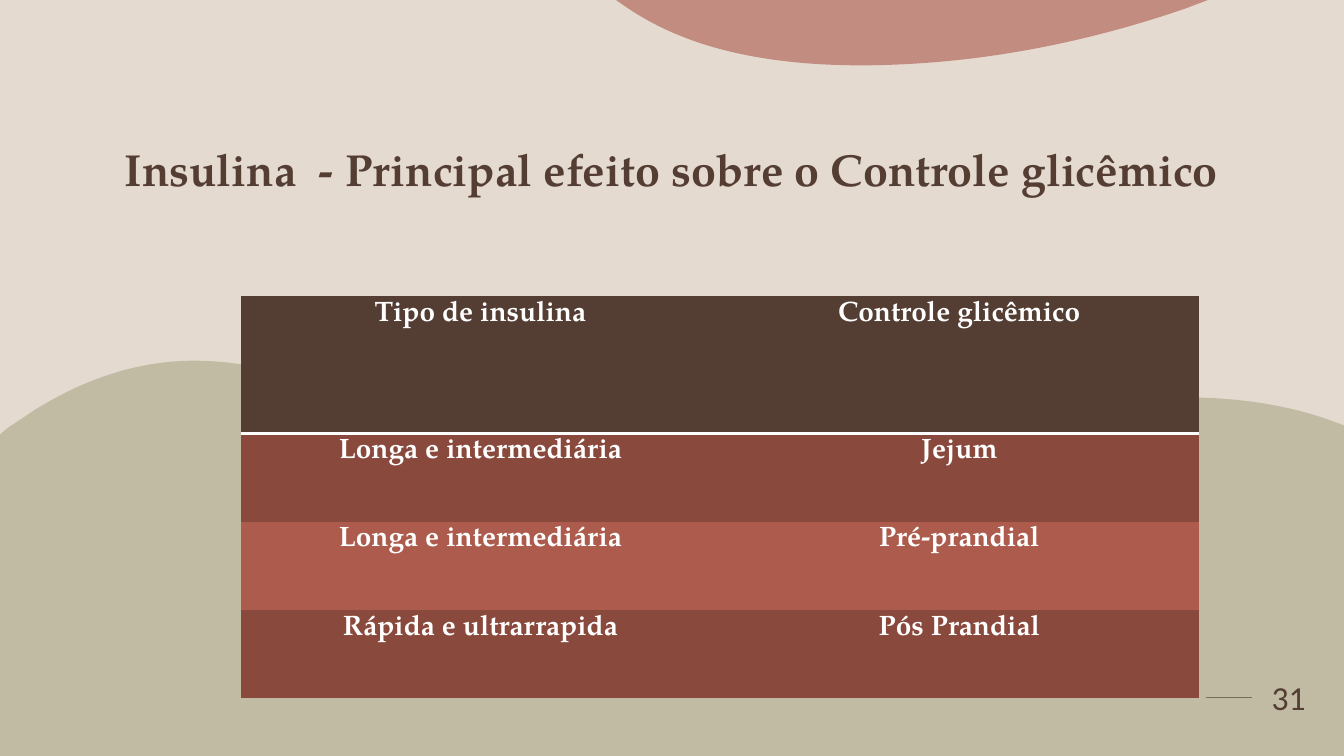
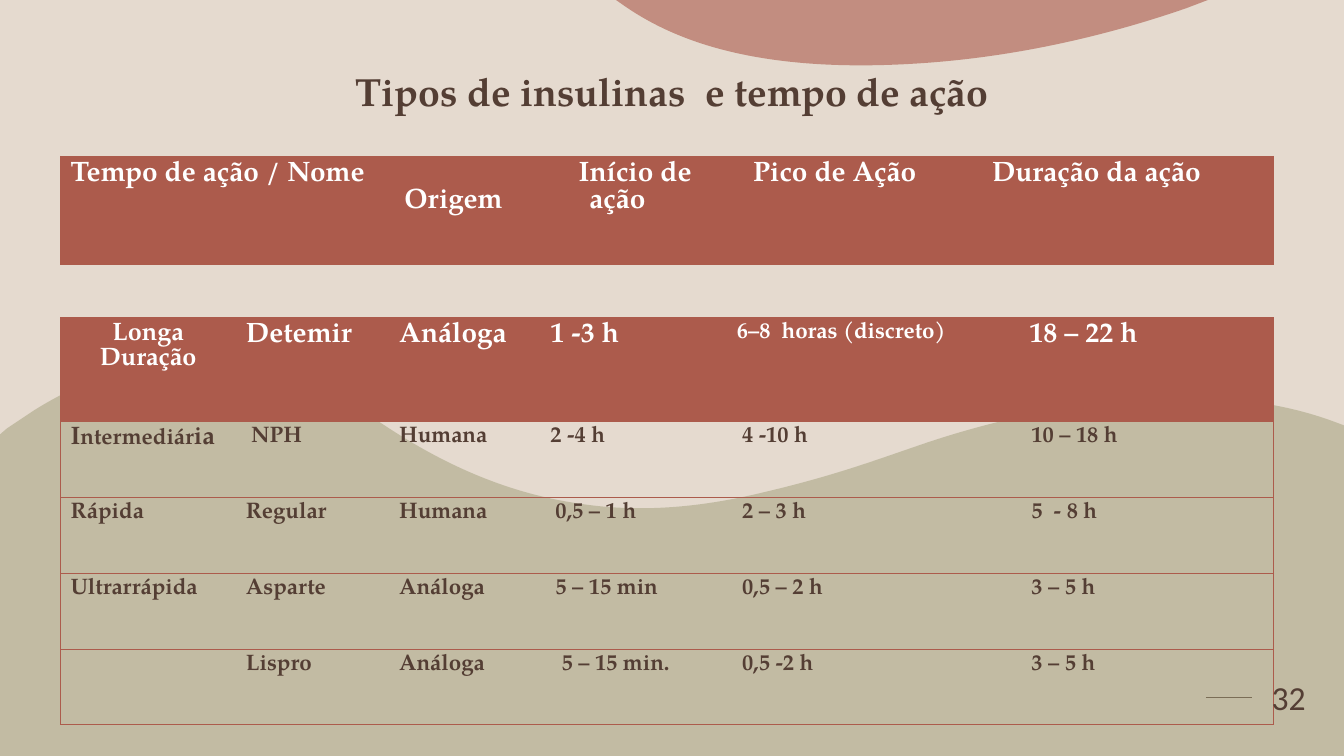
from lxml import etree
from pptx import Presentation
from pptx.dml.color import RGBColor
from pptx.enum.shapes import MSO_CONNECTOR
from pptx.enum.text import MSO_ANCHOR, PP_ALIGN
from pptx.oxml.ns import qn
from pptx.util import Inches, Pt

CENTER, LEFT = PP_ALIGN.CENTER, PP_ALIGN.LEFT
BOTTOM, MIDDLE = MSO_ANCHOR.BOTTOM, MSO_ANCHOR.MIDDLE
STRAIGHT = MSO_CONNECTOR.STRAIGHT

SAND, BROWN, OLIVE = "E5DACF", "543E34", "A09D79"
TERRACOTTA, RUST, WHITE = "AC5B4C", "8A493D", "FFFFFF"
SERIF, SANS = "TeX Gyre Pagella", "Calibri"
PLAIN_TABLE_STYLE = "{2D5ABB26-0587-4C30-8999-92F81FD0307C}"

HILLS = [
    (2.02, 3.58),
    (2.36, 3.59, 2.7, 3.66, 3.04, 3.79),
    (3.34, 3.9, 3.6, 4.08, 3.86, 4.25),
    (4.43, 4.62, 5.05, 4.9, 5.77, 5),
    (6.37, 5.09, 6.98, 5.03, 7.59, 4.88),
    (8.27, 4.72, 8.67, 4.57, 9.08, 4.43),
    (9.48, 4.29, 11.61, 3.57, 13.25, 4.19),
    (13.33, 4.22), (13.33, 7.5), (0, 7.5), (0, 4.31), (0.07, 4.25),
    (0.16, 4.19, 0.25, 4.13, 0.34, 4.07),
    (0.9, 3.72, 1.46, 3.56, 2.02, 3.58),
]
TOP_WAVE = [
    (6.11, 0), (11.98, 0), (11.77, 0.08),
    (10.56, 0.5, 9.61, 0.59, 9.24, 0.62),
    (7.56, 0.75, 6.71, 0.41, 6.21, 0.07),
]

CONTROL_ROWS = [
    ("Tipo de insulina", "Controle glicêmico"),
    ("Longa e intermediária", "Jejum"),
    ("Longa e intermediária", "Pré-prandial"),
    ("Rápida e ultrarrapida", "Pós Prandial"),
]
CONTROL_FILLS = [BROWN, RUST, TERRACOTTA, RUST]

ACTION_HEADER = [
    {"text": "Tempo de ação / Nome"},
    {"text": "Origem", "drop": 0.27},
    {"text": "Início de ação", "indent": 0.35, "align": CENTER},
    {"text": "Pico de Ação", "indent": 0.35},
    {"text": "Duração da ação"},
]
LONG_ACTING = [
    {"text": "Longa Duração", "size": 18, "align": CENTER},
    {"text": "Detemir"},
    {"text": "Análoga"},
    {"text": "1 -3 h"},
    {"text": "6–8  horas (discreto)", "size": 16},
    {"text": "18 – 22 h", "indent": 0.2},
]
INTERMEDIATE = [("I", 18), ("ntermediár", 16), ("ia", 18)]
OTHER_INSULINS = [
    (INTERMEDIATE, "NPH", "Humana", "2 -4 h", "4 -10 h", "10 – 18 h"),
    ("Rápida", "Regular", "Humana", "0,5 – 1 h", "2 – 3 h", "5  - 8 h"),
    ("Ultrarrápida", "Asparte", "Análoga", "5 – 15 min", "0,5 – 2 h", "3 – 5 h"),
    ("", "Lispro", "Análoga", "5 – 15 min.", "0,5 -2 h", "3 – 5 h"),
]
NAME_INDENTS = [0.05, 0, 0, 0]
ONSET_INDENTS = [0, 0.05, 0.05, 0.11]
PEAK_INDENT, DURATION_INDENT = 0.05, 0.22


def rgb(value):
    return RGBColor.from_string(value)


def set_font(font, size, color, name=SERIF, bold=True):
    font.size, font.name, font.bold = Pt(size), name, bold
    font.color.rgb = rgb(color)


def add_wave(slide, outline, height, color, opacity):
    ends = [(Inches(step[-2]), Inches(step[-1])) for step in outline]
    builder = slide.shapes.build_freeform(*ends[0], scale=1.0)
    builder.add_line_segments(ends[1:], close=False)
    wave = builder.convert_to_shape()
    left, top = wave.left, wave.top
    route = wave._element.spPr.find(".//" + qn("a:path"))
    for segment, step in zip(list(route)[1:], outline[1:]):
        if len(step) == 6:
            segment.tag = qn("a:cubicBezTo")
            for old_point in list(segment):
                segment.remove(old_point)
            for x, y in zip(step[::2], step[1::2]):
                etree.SubElement(segment, qn("a:pt"), x=str(Inches(x) - left),
                                 y=str(Inches(y) - top))
    etree.SubElement(route, qn("a:close"))
    wave.height = Inches(height)
    route.set("h", str(Inches(height)))
    wave.shadow.inherit = False
    wave.line.fill.background()
    wave.fill.solid()
    wave.fill.fore_color.rgb = rgb(color)
    tint = wave._element.spPr.find(".//" + qn("a:srgbClr"))
    etree.SubElement(tint, qn("a:alpha"), val=str(opacity * 1000))


def add_text(slide, box, text, anchor, size, name=SERIF, bold=True, spacing=1.0):
    frame = slide.shapes.add_textbox(*map(Inches, box)).text_frame
    frame.word_wrap = True
    frame.vertical_anchor = anchor
    paragraph = frame.paragraphs[0]
    paragraph.text = text
    paragraph.alignment = CENTER
    paragraph.line_spacing = spacing
    set_font(paragraph.font, size, BROWN, name, bold)


def start_slide(deck, title, title_top, title_size):
    slide = deck.slides.add_slide(deck.slide_layouts[6])
    dash = slide.shapes.add_connector(
        STRAIGHT, Inches(11.96), Inches(6.92), Inches(12.42), Inches(6.92))
    dash.line.color.rgb = rgb(BROWN)
    dash.line.width = Pt(1.25)
    etree.SubElement(dash._element.spPr, qn("a:effectLst"))
    add_wave(slide, HILLS, 3.92, OLIVE, 50)
    add_wave(slide, TOP_WAVE, 0.65, TERRACOTTA, 60)
    add_text(slide, (1, title_top, 11.33, 1), title, BOTTOM, title_size,
             spacing=0.9)
    return slide


def add_page_number(slide, number):
    add_text(slide, (12.42, 6.43, 0.72, 0.98), number, MIDDLE, 24, SANS, False)


def add_plain_table(slide, left, top, widths, height, first_height, row_count):
    table = slide.shapes.add_table(
        row_count, len(widths), Inches(left), Inches(top),
        Inches(sum(widths)), Inches(height)).table
    table.first_row = table.horz_banding = False
    table._tbl.tblPr.find(qn("a:tableStyleId")).text = PLAIN_TABLE_STYLE
    for column, width in zip(table.columns, widths):
        column.width = Inches(width)
    for index, row in enumerate(table.rows):
        row.height = Inches((height - first_height) / (row_count - 1)
                            if index else first_height)
    return table


def fill_cell(cell, text, size=20, color=WHITE, align=LEFT, indent=0, drop=0,
              fill=None, sides="", rule=(TERRACOTTA, 0.5)):
    paragraph = cell.text_frame.paragraphs[0]
    if isinstance(text, str):
        paragraph.text = text
    else:
        for part, part_size in text:
            run = paragraph.add_run()
            run.text = part
            run.font.size = Pt(part_size)
    paragraph.alignment = align
    set_font(paragraph.font, size, color)
    if indent:
        properties = paragraph._p.get_or_add_pPr()
        properties.set("marL", "0")
        properties.set("indent", str(Inches(indent)))
    if drop:
        cell.margin_top = Inches(0.05 + drop)
    rule_color, rule_width = rule
    for side in sides:
        edge = etree.SubElement(cell._tc.get_or_add_tcPr(), qn("a:ln" + side),
                                w=str(Pt(rule_width)))
        solid = etree.SubElement(edge, qn("a:solidFill"))
        etree.SubElement(solid, qn("a:srgbClr"), val=rule_color)
    if fill:
        cell.fill.solid()
        cell.fill.fore_color.rgb = rgb(fill)
    else:
        cell.fill.background()


def fill_framed_row(table, row, cells, **style):
    last = len(cells) - 1
    for column, content in enumerate(cells):
        sides = (("L" if column == 0 else "") + ("R" if column == last else "")
                 + ("T" if row == 0 else "") + "B")
        fill_cell(table.cell(row, column), sides=sides, **{**style, **content})


def build_control_slide(deck):
    slide = start_slide(
        deck, "Insulina  - Principal efeito sobre o Controle glicêmico", 1, 32)
    table = add_plain_table(slide, 2.39, 2.94, [4.75] * 2, 3.99, 1.36,
                            len(CONTROL_ROWS))
    for row, (texts, fill) in enumerate(zip(CONTROL_ROWS, CONTROL_FILLS)):
        for column, text in enumerate(texts):
            fill_cell(table.cell(row, column), text, align=CENTER, fill=fill,
                      sides="" if row else "B", rule=(WHITE, 2))
    add_page_number(slide, "31")


def build_action_slide(deck):
    slide = start_slide(deck, "Tipos de insulinas  e tempo de ação", 0.19, 28)
    insulins = add_plain_table(
        slide, 0.6, 3.15, [1.74, 1.52, 1.5, 1.85, 2.7, 2.72], 4.04, 1.03,
        len(OTHER_INSULINS) + 1)
    fill_framed_row(insulins, 0, LONG_ACTING, fill=TERRACOTTA)
    for row, texts in enumerate(OTHER_INSULINS):
        indents = (0, NAME_INDENTS[row], 0, ONSET_INDENTS[row], PEAK_INDENT,
                   DURATION_INDENT)
        cells = [{"text": text, "indent": indent}
                 for text, indent in zip(texts, indents)]
        fill_framed_row(insulins, row + 1, cells, size=16, color=BROWN)
    add_page_number(slide, "32")
    header = add_plain_table(
        slide, 0.6, 1.55, [3.31, 1.32, 1.79, 2.72, 2.89], 1.07, 1.07, 1)
    fill_framed_row(header, 0, ACTION_HEADER, fill=TERRACOTTA)


def main():
    deck = Presentation()
    deck.slide_width, deck.slide_height = Inches(13.33), Inches(7.5)
    backdrop = deck.slide_master.background.fill
    backdrop.solid()
    backdrop.fore_color.rgb = rgb(SAND)
    build_control_slide(deck)
    build_action_slide(deck)
    deck.save("out.pptx")


if __name__ == "__main__":
    main()
